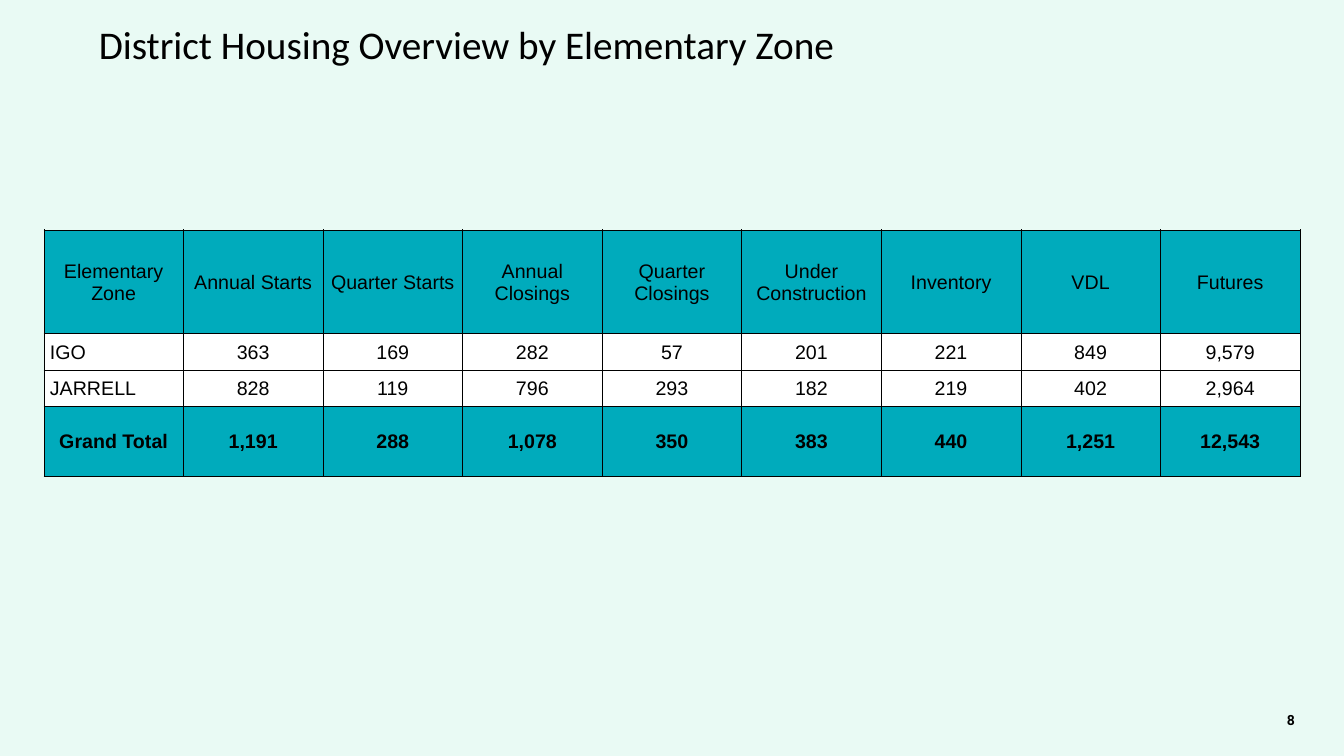
import pptx
import pptx.dml.color
import pptx.enum.text
import pptx.oxml
import pptx.oxml.ns
import pptx.util

Inches = pptx.util.Inches
RGB = pptx.dml.color.RGBColor.from_string
ALIGN = pptx.enum.text.PP_ALIGN
MIDDLE = pptx.enum.text.MSO_ANCHOR.MIDDLE

THEME = {
    "background": "E9FAF4", "band": "00ABBC", "body": "FFFFFF", "ink": "000000",
    "title": ("Calibri", 28), "table": ("Arial", 14), "page": ("Roboto", 10),
    "border": 0.5,
}

HEADINGS = ["Elementary Zone", "Annual Starts", "Quarter Starts",
            "Annual Closings", "Quarter Closings", "Under Construction",
            "Inventory", "VDL", "Futures"]
ZONES = [
    ["IGO", 363, 169, 282, 57, 201, 221, 849, 9579],
    ["JARRELL", 828, 119, 796, 293, 182, 219, 402, 2964],
]
TOTALS = ["Grand Total"] + [sum(column) for column in list(zip(*ZONES))[1:]]
ROWS = [HEADINGS, *ZONES, TOTALS]
ROW_HEIGHTS = [1.03, 0.36, 0.36, 0.7]


def write(tf, text, style, align, bold=False):
    """Put one styled run into the first paragraph of a text frame."""
    p = tf.paragraphs[0]
    p.alignment = align
    r = p.add_run()
    r.text = text
    r.font.name, size = THEME[style]
    r.font.size = pptx.util.Pt(size)
    r.font.bold = bold
    r.font.color.rgb = RGB(THEME["ink"])


def add_borders(cell):
    width = pptx.util.Pt(THEME["border"])
    for side in ("lnL", "lnR", "lnT", "lnB"):
        cell._tc.get_or_add_tcPr().append(pptx.oxml.parse_xml(
            f'<a:{side} {pptx.oxml.ns.nsdecls("a")} w="{width}"><a:solidFill>'
            f'<a:srgbClr val="{THEME["ink"]}"/></a:solidFill></a:{side}>'))


prs = pptx.Presentation()
prs.slide_width, prs.slide_height = Inches(13.33), Inches(7.5)
s = prs.slides.add_slide(prs.slide_layouts[6])
s.background.fill.solid()
s.background.fill.fore_color.rgb = RGB(THEME["background"])

# Title
sp = s.shapes.add_textbox(Inches(0.98), Inches(0.18), Inches(7.95), Inches(0.51))
tf = sp.text_frame
tf.word_wrap = True
tf.vertical_anchor = MIDDLE
tf.margin_left = tf.margin_right = tf.margin_top = tf.margin_bottom = 0
write(tf, "District Housing Overview by Elementary Zone", "title", ALIGN.LEFT)

# Housing table, centred across the slide
table_width = Inches(12.46)
table = s.shapes.add_table(
    len(ROWS), len(HEADINGS), (prs.slide_width - table_width) // 2,
    Inches(2.28), table_width, Inches(sum(ROW_HEIGHTS))).table
table.horz_banding = False
for column in table.columns:
    column.width = table_width // len(HEADINGS)

for i, (values, height) in enumerate(zip(ROWS, ROW_HEIGHTS)):
    table.rows[i].height = Inches(height)
    is_zone = values in ZONES
    for j, value in enumerate(values):
        cell = table.cell(i, j)
        is_zone_name = is_zone and j == 0
        add_borders(cell)
        cell.fill.solid()
        cell.fill.fore_color.rgb = RGB(THEME["body" if is_zone else "band"])
        cell.vertical_anchor = MIDDLE
        cell.margin_left = Inches(0.06 if is_zone_name else 0.01)
        cell.margin_right = cell.margin_top = Inches(0.01)
        cell.margin_bottom = 0
        write(cell.text_frame, value if isinstance(value, str) else f"{value:,}",
              "table", ALIGN.LEFT if is_zone_name else ALIGN.CENTER,
              bold=values is TOTALS)

# Page number
sp = s.shapes.add_textbox(Inches(9.94), Inches(6.94), Inches(3), Inches(0.4))
tf = sp.text_frame
tf.word_wrap = True
tf.vertical_anchor = MIDDLE
write(tf, "8", "page", ALIGN.RIGHT, bold=True)

prs.save("out.pptx")
